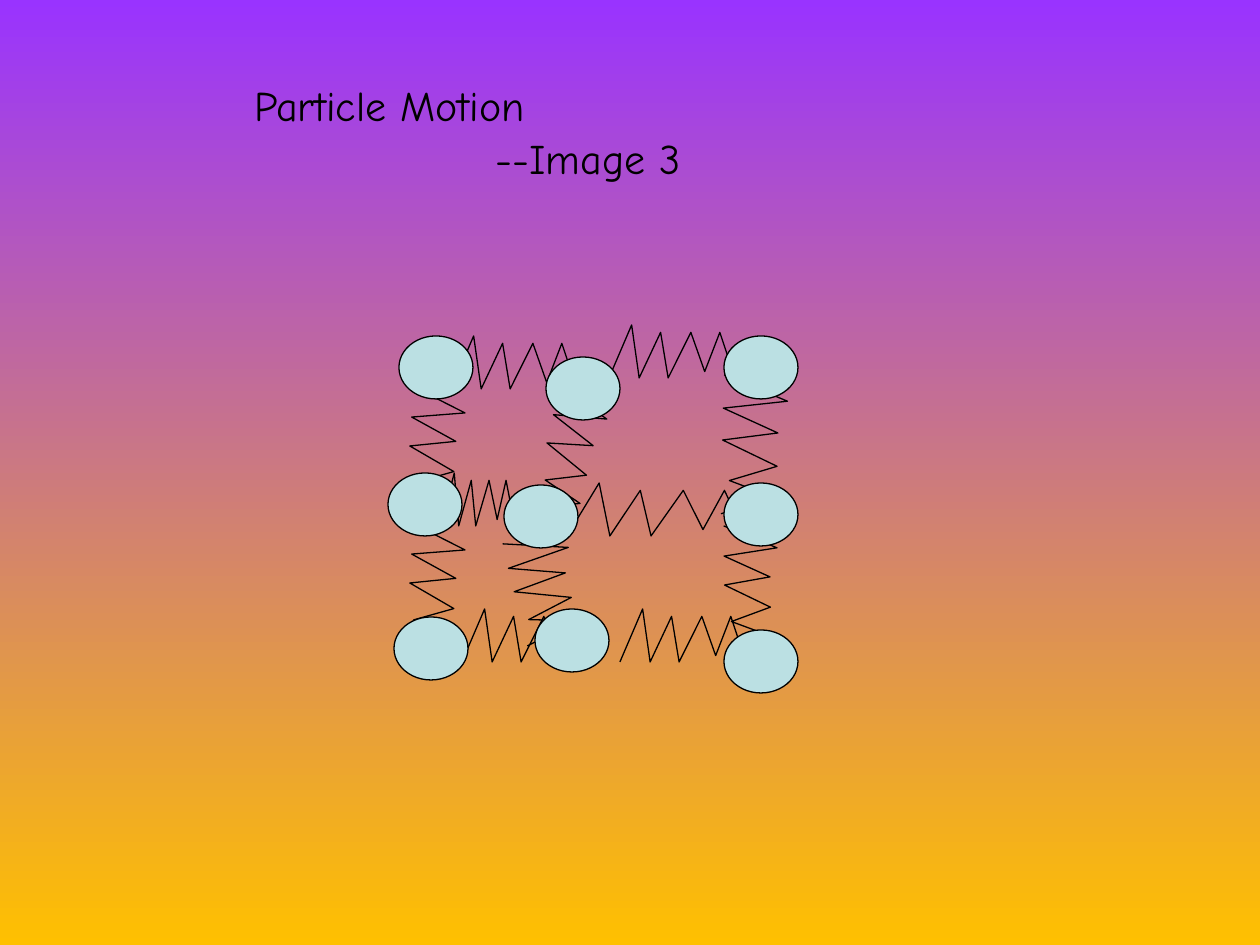
from pptx import Presentation
from pptx.dml.color import RGBColor
from pptx.enum.shapes import MSO_SHAPE
from pptx.enum.text import MSO_AUTO_SIZE
from pptx.util import Emu, Pt

OVAL = MSO_SHAPE.OVAL
GROW = MSO_AUTO_SIZE.SHAPE_TO_FIT_TEXT

BLACK = RGBColor(0x00, 0x00, 0x00)
PALE_BLUE = RGBColor(0xBB, 0xE0, 0xE3)
VIOLET = RGBColor(0x99, 0x33, 0xFF)
AMBER = RGBColor(0xFF, 0xC0, 0x00)

PX = 914400 / 126  # EMU in one px

# Zigzag of one spring, as fractions of its width and height
ZIGZAG = [(0, 1), (0.18, 0), (0.24, 1), (0.41, 0.14), (0.47, 1),
          (0.65, 0.14), (0.76, 0.88), (0.88, 0.14), (1, 1)]

# Left, top, width, height, rotation
SPRINGS = [
    # Between columns
    (451, 336, 126, 53, 0),
    (609, 325, 126, 53, 0),
    (441, 473, 74, 53, 0),
    (567, 483, 179, 53, 0),
    (462, 609, 126, 53, 0),
    (620, 609, 126, 53, 0),
    # Between rows
    (373, 425, 126, 53, 93.7),
    (509, 426, 126, 53, 102.8),
    (685, 413, 139, 64, 91.3),
    (373, 562, 126, 53, 93.7),
    (493, 556, 105, 63, 76.4),
    (688, 562, 126, 53, 89.2),
]

# Left and top of each particle
PARTICLES = [(388, 473), (504, 485), (394, 617), (535, 609), (399, 336),
             (546, 357), (724, 336), (724, 483), (724, 630)]
PARTICLE_SIZE = (74, 63)


def px(n):
    return Emu(round(n * PX))


class Sketch:
    font = "Comic Neue"
    size = Pt(24)
    stroke = Pt(0.75)

    def __init__(self, slide):
        self.slide = slide

    def background(self, top, bottom):
        fill = self.slide.background.fill
        fill.gradient()
        fill.gradient_angle = 270
        for stop, color in zip(fill.gradient_stops, (top, bottom)):
            stop.color.rgb = color

    def outline(self, sp):
        sp.shadow.inherit = False
        sp.line.color.rgb = BLACK
        sp.line.width = self.stroke

    def spring(self, x, y, w, h, rotation):
        points = [(px(x + fx * w), px(y + fy * h)) for fx, fy in ZIGZAG]
        builder = self.slide.shapes.build_freeform(*points[0])
        builder.add_line_segments(points[1:], close=False)
        sp = builder.convert_to_shape()
        sp.rotation = rotation
        sp.fill.background()
        self.outline(sp)

    def particle(self, x, y):
        w, h = PARTICLE_SIZE
        sp = self.slide.shapes.add_shape(OVAL, px(x), px(y), px(w), px(h))
        sp.fill.solid()
        sp.fill.fore_color.rgb = PALE_BLUE
        self.outline(sp)

    def text(self, x, y, w, h, words):
        sp = self.slide.shapes.add_textbox(px(x), px(y), px(w), px(h))
        tf = sp.text_frame
        tf.word_wrap = True
        tf.auto_size = GROW
        r = tf.paragraphs[0].add_run()
        r.text = words
        r.font.name = self.font
        r.font.size = self.size
        r.font.color.rgb = BLACK


def main():
    prs = Presentation()
    prs.slide_width, prs.slide_height = px(1260), px(945)
    s = Sketch(prs.slides.add_slide(prs.slide_layouts[6]))
    s.background(VIOLET, AMBER)

    # Lattice: springs behind the particles
    for spring in SPRINGS:
        s.spring(*spring)
    for particle in PARTICLES:
        s.particle(*particle)

    # Heading
    s.text(483, 126, 399, 63, "--Image 3")
    s.text(242, 73, 683, 63, "Particle Motion")

    prs.save("out.pptx")


if __name__ == "__main__":
    main()
